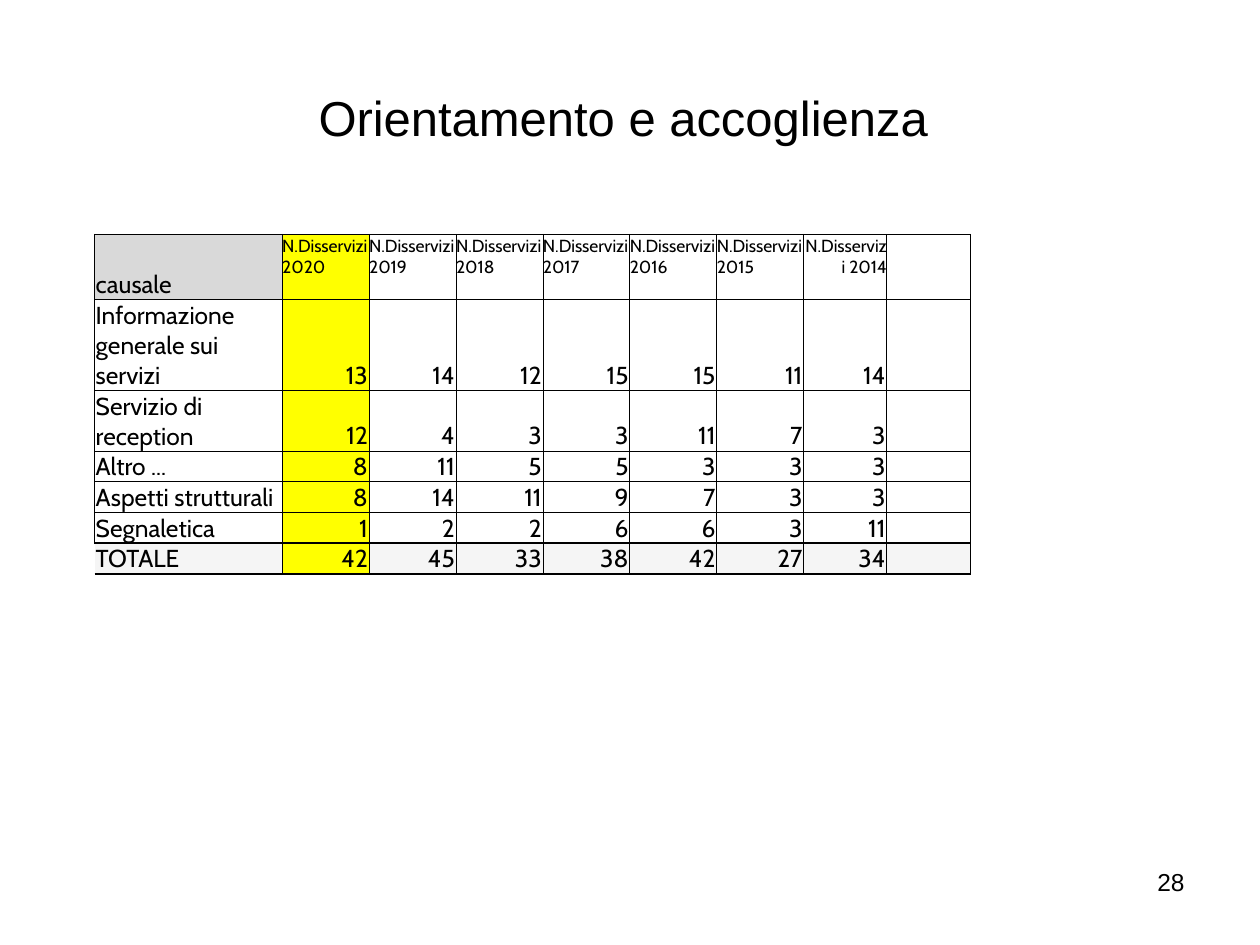
from lxml import etree
from pptx import Presentation
from pptx.dml.color import RGBColor
from pptx.enum.text import MSO_ANCHOR as Anchor, PP_ALIGN as Align
from pptx.oxml.ns import qn
from pptx.util import Inches, Pt

BLACK = RGBColor(0x00, 0x00, 0x00)
WHITE = RGBColor(0xFF, 0xFF, 0xFF)
YELLOW = RGBColor(0xFF, 0xFF, 0x00)
HEADER_GRAY = RGBColor(0xD9, 0xD9, 0xD9)
TOTAL_GRAY = RGBColor(0xF5, 0xF5, 0xF5)

YEARS = range(2020, 2013, -1)
COMPLAINTS = [
    ("Informazione generale sui servizi", 13, 14, 12, 15, 15, 11, 14),
    ("Servizio di reception", 12, 4, 3, 3, 11, 7, 3),
    ("Altro ...", 8, 11, 5, 5, 3, 3, 3),
    ("Aspetti strutturali", 8, 14, 11, 9, 7, 3, 3),
    ("Segnaletica", 1, 2, 2, 6, 6, 3, 11),
    ("TOTALE", 42, 45, 33, 38, 42, 27, 34),
]
COLUMN_WIDTHS = [1.49] + [0.69] * 6 + [0.66] * 2
ROW_HEIGHTS = [0.52, 0.72, 0.48] + [0.24] * 4


class SlideBuilder:
    text_font = "Arial"
    table_font = "Cabin"
    body_size = 14
    header_size = 10

    def __init__(self, slide):
        self.slide = slide

    def style(self, paragraph, name, size, align):
        paragraph.alignment = align
        paragraph.font.name = name
        paragraph.font.size = Pt(size)
        paragraph.font.color.rgb = BLACK

    def text(self, box, text, size, align, anchor=Anchor.TOP):
        shape = self.slide.shapes.add_textbox(*map(Inches, box))
        frame = shape.text_frame
        frame.word_wrap = True
        frame.vertical_anchor = anchor
        frame.text = text
        self.style(frame.paragraphs[0], self.text_font, size, align)

    def border(self, cell, **widths):
        """Draw the sides l, r, t, b in points; a width of 0 hides the side."""
        properties = cell._tc.get_or_add_tcPr()
        for index, side in enumerate("lrtb"):
            width = widths[side]
            line = etree.Element(qn(f"a:ln{side.upper()}"), w=str(Pt(width)))
            if width:
                fill = etree.SubElement(line, qn("a:solidFill"))
                etree.SubElement(fill, qn("a:srgbClr"), val=str(BLACK))
            else:
                etree.SubElement(line, qn("a:noFill"))
            properties.insert(index, line)

    def cell(self, cell, text, fill, size, align, anchor, side_margin):
        cell.fill.solid()
        cell.fill.fore_color.rgb = fill
        cell.vertical_anchor = anchor
        cell.margin_left = cell.margin_right = Inches(side_margin)
        cell.margin_top, cell.margin_bottom = Inches(0.01), 0
        cell.text = text
        paragraph = cell.text_frame.paragraphs[0]
        self.style(paragraph, self.table_font, size, align)
        if not text:
            # Keeps empty cells from stretching their row
            etree.SubElement(paragraph._p, qn("a:endParaRPr"), sz=str(size * 100))

    def table(self, left, top, rows):
        frame = self.slide.shapes.add_table(
            len(rows), len(COLUMN_WIDTHS), Inches(left), Inches(top),
            Inches(sum(COLUMN_WIDTHS)), Inches(sum(ROW_HEIGHTS)))
        table = frame.table
        table.first_row = table.horz_banding = False
        for column, width in zip(table.columns, COLUMN_WIDTHS):
            column.width = Inches(width)
        for row, height in zip(table.rows, ROW_HEIGHTS):
            row.height = Inches(height)

        total = len(rows) - 1
        last_year = len(YEARS)
        for r, values in enumerate(rows):
            for c, value in enumerate(values):
                is_year = r == 0 and c > 0
                if c == 1:
                    fill = YELLOW
                elif r == total:
                    fill = TOTAL_GRAY
                else:
                    fill = HEADER_GRAY if r == c == 0 else WHITE
                left_aligned = c == 0 or (is_year and c < last_year)
                cell = table.cell(r, c)
                self.cell(cell, str(value), fill,
                          self.header_size if is_year else self.body_size,
                          Align.LEFT if left_aligned else Align.RIGHT,
                          Anchor.TOP if is_year else Anchor.BOTTOM,
                          0 if is_year else 0.01)
                self.border(cell, l=0 if r == total and c == 0 else 0.5, r=0.5,
                            t=1 if r == total else 0.5,
                            b=1 if r >= total - 1 else 0.5)


def main():
    presentation = Presentation()
    presentation.slide_width = Inches(10)
    presentation.slide_height = Inches(7.5)
    slide = presentation.slides.add_slide(presentation.slide_layouts[6])
    builder = SlideBuilder(slide)

    # Title
    builder.text((0.5, 0.3, 9, 1.25), "Orientamento e accoglienza ", 28,
                 Align.CENTER, Anchor.MIDDLE)

    # Complaints by cause and year, with an empty last column
    header = ["causale"] + [f"N.Disservizi {year}" for year in YEARS] + [""]
    builder.table(0.75, 1.86, [header] + [[*row, ""] for row in COMPLAINTS])

    # Page number
    builder.text((7.17, 6.83, 2.33, 0.52), "28", 14, Align.RIGHT)

    presentation.save("out.pptx")


if __name__ == "__main__":
    main()
